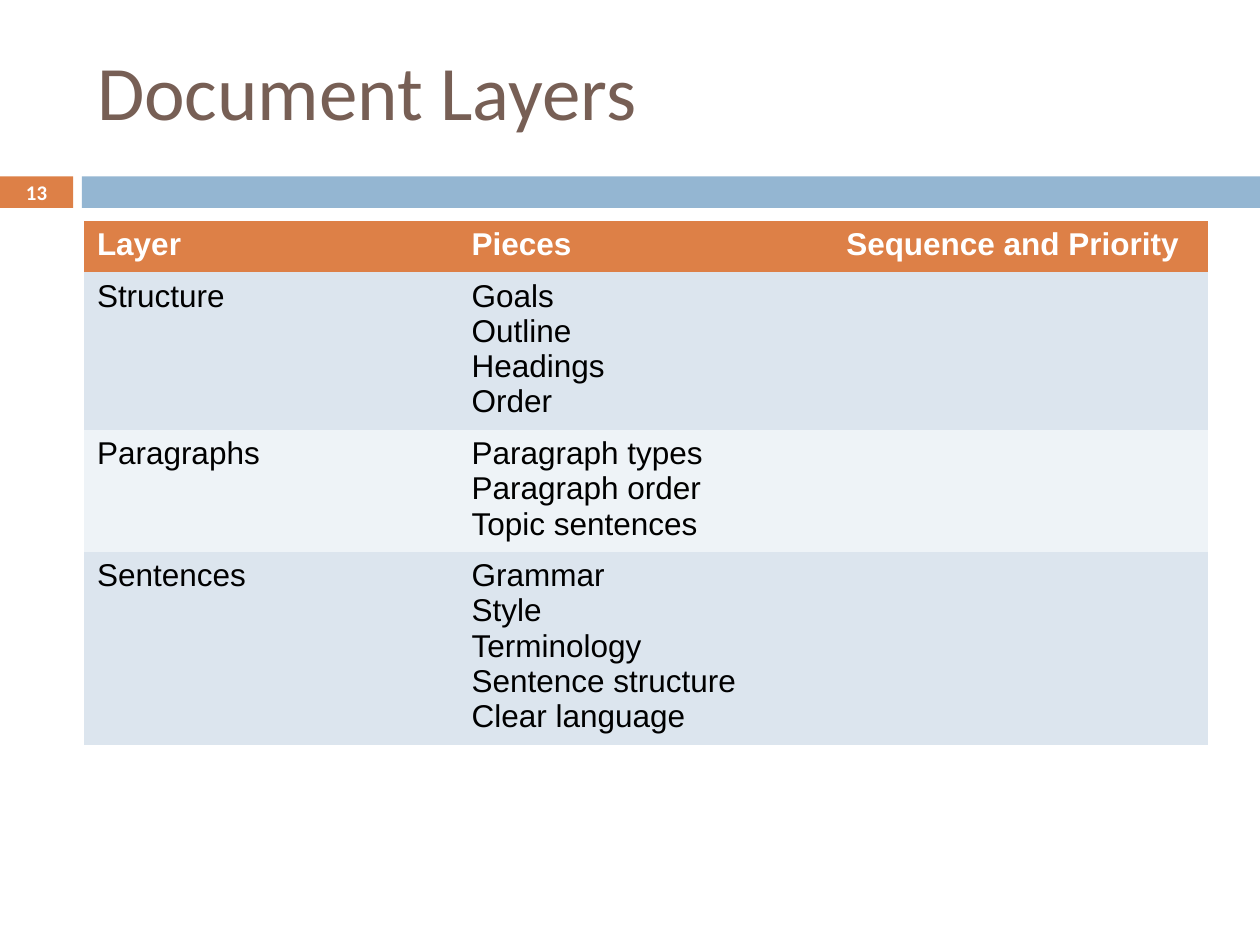
"""Build the Document Layers slide with its table of layers and pieces."""
from pptx import Presentation
from pptx import util as u
from pptx.dml.color import RGBColor
from pptx.enum import shapes, text
from pptx.oxml.ns import qn

TITLE = "Document Layers"
PAGE_NUMBER = "13"
HEADER = ["Layer", "Pieces", "Sequence and Priority"]
LAYERS = [
    ("Structure", ["Goals", "Outline", "Headings", "Order"]),
    ("Paragraphs", ["Paragraph types", "Paragraph order", "Topic sentences"]),
    ("Sentences", ["Grammar", "Style", "Terminology", "Sentence structure", "Clear language"]),
]
COLORS = {
    "orange": "DD8047", "blue": "94B6D2", "brown": "775F55", "white": "FFFFFF",
    "black": "000000", "dark_band": "DCE5EE", "light_band": "EEF3F7",
}
BARS = [(0, 0.58, "orange"), (0.65, 9.35, "blue")]
LEFT, WIDTH = 0.67, 8.92
ROW_BASE, LINE_HEIGHT = 0.13, 0.28
NO_STYLE = "{2D5ABB26-0587-4C30-8999-92F81FD0307C}"


def color(name):
    return RGBColor.from_string(COLORS[name])


def place(shape, left, top, width, height):
    shape.left, shape.top, shape.width, shape.height = map(u.Inches, (left, top, width, height))


def format_text(text_frame, font_name, size, color_name, bold=False, align=text.PP_ALIGN.LEFT):
    for paragraph in text_frame.paragraphs:
        paragraph.alignment = align
        for run in paragraph.runs:
            run.font.name, run.font.size, run.font.bold = font_name, u.Pt(size), bold
            run.font.color.rgb = color(color_name)


def add_bars(slide):
    for left, width, fill in BARS:
        bar = slide.shapes.add_shape(
            shapes.MSO_SHAPE.RECTANGLE, *map(u.Inches, (left, 1.4, width, 0.25)))
        bar.shadow.inherit = False
        bar.fill.solid()
        bar.fill.fore_color.rgb = color(fill)
        bar.line.fill.background()


def add_title(slide):
    title = slide.shapes.title
    place(title, LEFT, 0.17, WIDTH, 1.08)
    title.text_frame.text = TITLE
    title.text_frame.vertical_anchor = text.MSO_ANCHOR.MIDDLE
    format_text(title.text_frame, "Calibri", 44, "brown")


def add_table(slide):
    rows = [HEADER] + [[layer, "\n".join(pieces), ""] for layer, pieces in LAYERS]
    line_counts = [1] + [len(pieces) for _, pieces in LAYERS]
    heights = [ROW_BASE + LINE_HEIGHT * count for count in line_counts]
    frame = slide.shapes.add_table(
        len(rows), len(HEADER), *map(u.Inches, (LEFT, 1.75, WIDTH, sum(heights))))
    table = frame.table
    table.horz_banding = False
    table._tbl.tblPr.find(qn("a:tableStyleId")).text = NO_STYLE
    for row_index, values in enumerate(rows):
        is_header = row_index == 0
        band = "dark_band" if row_index % 2 else "light_band"
        table.rows[row_index].height = u.Inches(heights[row_index])
        for cell, value in zip(table.rows[row_index].cells, values):
            cell.fill.solid()
            cell.fill.fore_color.rgb = color("orange" if is_header else band)
            cell.text_frame.text = value
            format_text(cell.text_frame, "Arial", 18, "white" if is_header else "black", is_header)


def add_page_number(slide):
    box = slide.shapes.add_textbox(*map(u.Inches, (0, 1.39, 0.58, 0.27)))
    frame = box.text_frame
    frame.word_wrap = True
    frame.margin_left = frame.margin_right = frame.margin_top = frame.margin_bottom = 0
    frame.vertical_anchor = text.MSO_ANCHOR.MIDDLE
    frame.text = PAGE_NUMBER
    format_text(frame, "Calibri", 11.9, "white", True, text.PP_ALIGN.CENTER)


def main():
    presentation = Presentation()
    presentation.slide_width, presentation.slide_height = u.Inches(10), u.Inches(7.5)
    slide = presentation.slides.add_slide(presentation.slide_layouts[5])
    add_bars(slide)
    add_title(slide)
    add_table(slide)
    add_page_number(slide)
    presentation.save("out.pptx")


if __name__ == "__main__":
    main()
